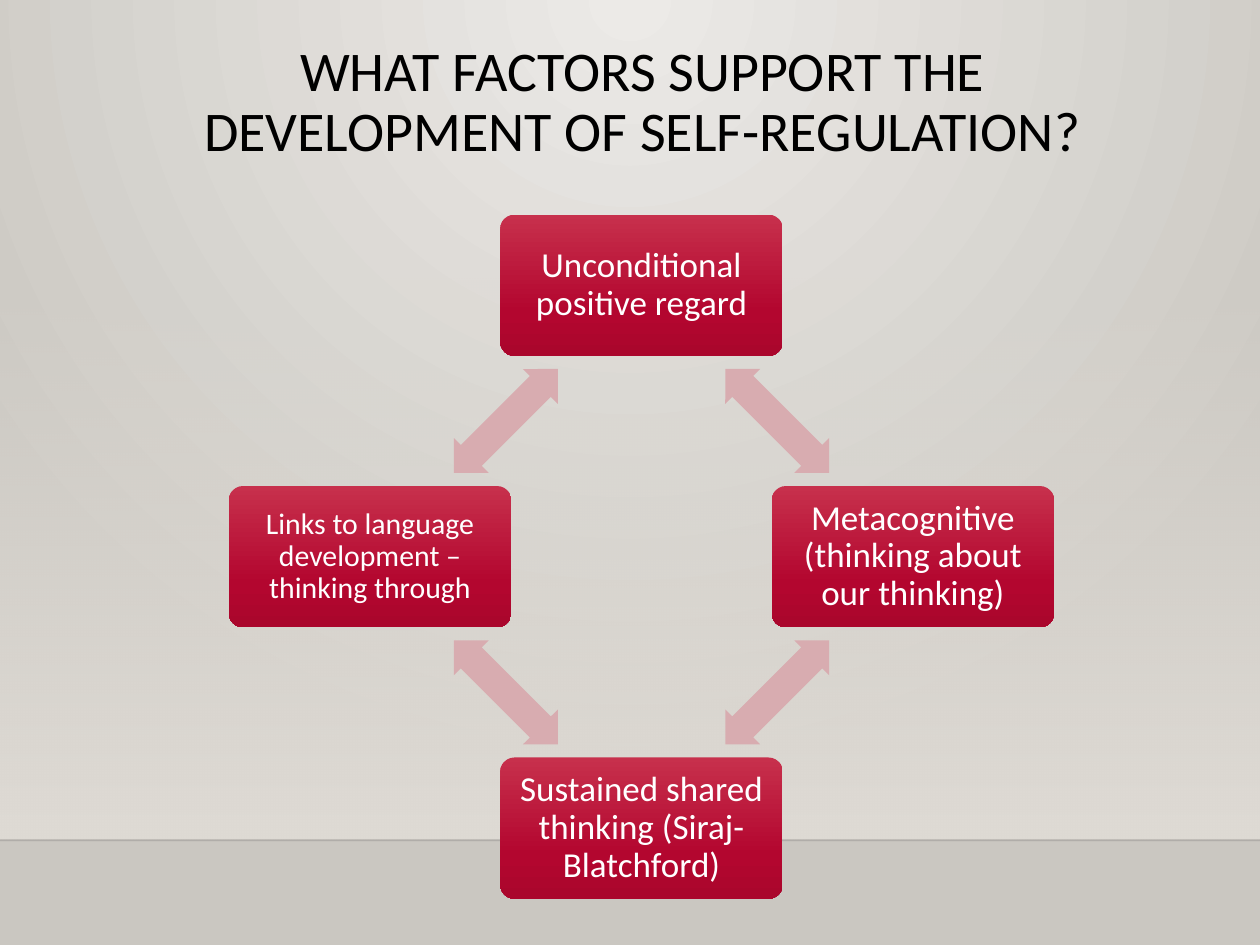
from math import cos, radians, sin, sqrt

from lxml import etree
from pptx import Presentation
from pptx.dml.color import RGBColor
from pptx.enum import shapes, text
from pptx.oxml.ns import qn
from pptx.util import Pt

HUES = {
    "glow": "ECEAE7", "edge": "CAC7C1", "haze": "DFDBD5", "rule": "000001",
    "top": "C7304C", "mid": "B3062F", "low": "AA062C",
    "arrow": "D8ACB0", "ink": "000000", "white": "FFFFFF",
}
FACTORS = [
    ("Unconditional positive regard", 20),
    ("Metacognitive (thinking about our thinking)", 20),
    ("Sustained shared thinking (Siraj-Blatchford)", 20),
    ("Links to language development – thinking through", 17),
]


def hue(name):
    return RGBColor.from_string(HUES[name])


def add(node, tag, **attrs):
    return etree.SubElement(node, qn(tag), {k: str(v) for k, v in attrs.items()})


def blend(fill, root, stops, round_=False):
    fill.gradient()
    grad = root.find(".//" + qn("a:gradFill"))
    for child in list(grad):
        grad.remove(child)
    row = add(grad, "a:gsLst")
    for pos, name, alpha in stops:
        stop = add(row, "a:gs", pos=pos * 1000)
        tint = add(stop, "a:srgbClr", val=HUES[name])
        if alpha < 100:
            add(tint, "a:alpha", val=alpha * 1000)
    if round_:
        shade = add(grad, "a:path", path="circle")
        add(shade, "a:fillToRect", l=43000, t=0, r=43000, b=100000)
    else:
        add(grad, "a:lin", ang=5400000, scaled=0)


def add_shape(slide, kind, left, top, width, height):
    shape = slide.shapes.add_shape(kind, Pt(left), Pt(top), Pt(width), Pt(height))
    shape.shadow.inherit = False
    shape.line.fill.background()
    return shape


def style(par, size, name):
    par.alignment = text.PP_ALIGN.CENTER
    par.line_spacing = 0.9
    par.font.name = "Calibri"
    par.font.size = Pt(size)
    par.font.color.rgb = hue(name)


def add_scene(slide, width, floor):
    blend(slide.background.fill, slide.element,
          [(0, "glow", 100), (100, "edge", 100)], True)
    top = 158.4
    wall = add_shape(slide, shapes.MSO_SHAPE.RECTANGLE, 0, top, width, floor - top)
    blend(wall.fill, wall.element, [(0, "haze", 0), (100, "haze", 100)])
    rule = slide.shapes.add_connector(
        shapes.MSO_CONNECTOR.STRAIGHT, 0, Pt(floor), Pt(width), Pt(floor))
    rule.line.width = Pt(1)
    rule.line.color.rgb = hue("rule")
    add(rule.element.spPr.find(".//" + qn("a:srgbClr")), "a:alpha", val=20000)
    add(rule.element.spPr, "a:effectLst")


def set_title(slide, left, top, width, height):
    title = slide.shapes.title
    title.left, title.top = Pt(left), Pt(top)
    title.width, title.height = Pt(width), Pt(height)
    frame = title.text_frame
    frame.text = "WHAT FACTORS SUPPORT THE\vDEVELOPMENT OF SELF-REGULATION?"
    frame.auto_size = text.MSO_AUTO_SIZE.NONE
    frame.vertical_anchor = text.MSO_ANCHOR.TOP
    style(frame.paragraphs[0], 32, "ink")


def add_card(slide, x, y, words, size):
    wide, high = 161.4, 80.7
    card = add_shape(slide, shapes.MSO_SHAPE.ROUNDED_RECTANGLE,
                     x - wide / 2, y - high / 2, wide, high)
    card.adjustments[0] = 0.1
    blend(card.fill, card.element,
          [(0, "top", 100), (69, "mid", 100), (100, "low", 100)])
    frame = card.text_frame
    frame.word_wrap = True
    frame.vertical_anchor = text.MSO_ANCHOR.MIDDLE
    frame.margin_left = frame.margin_right = Pt(8)
    frame.margin_top = frame.margin_bottom = Pt(8)
    frame.text = words
    style(frame.paragraphs[0], size, "white")


def add_arrow(slide, x, y, turn):
    wide, high = 84, 28.2
    arrow = add_shape(slide, shapes.MSO_SHAPE.LEFT_RIGHT_ARROW,
                      x - wide / 2, y - high / 2, wide, high)
    arrow.adjustments[0], arrow.adjustments[1] = 0.6, 0.5
    arrow.rotation = turn
    arrow.fill.solid()
    arrow.fill.fore_color.rgb = hue("arrow")


def add_cycle(slide, x, y, reach):
    step = 360 / len(FACTORS)
    for i, (words, size) in enumerate(FACTORS):
        turn = i * step
        angle = radians(turn)
        add_card(slide, x + reach * sin(angle), y - reach * cos(angle), words, size)
        turn += step / 2
        angle, span = radians(turn), reach / sqrt(2)
        add_arrow(slide, x + span * sin(angle), y - span * cos(angle), turn)


def main():
    deck = Presentation()
    deck.slide_width, deck.slide_height = Pt(720), Pt(540)
    slide = deck.slides.add_slide(deck.slide_layouts[5])
    add_scene(slide, 720, 480.2)
    set_title(slide, 25.2, 20.9, 684, 58.3)
    add_cycle(slide, 366.6, 318.1, 155.1)
    deck.save("out.pptx")


if __name__ == "__main__":
    main()
